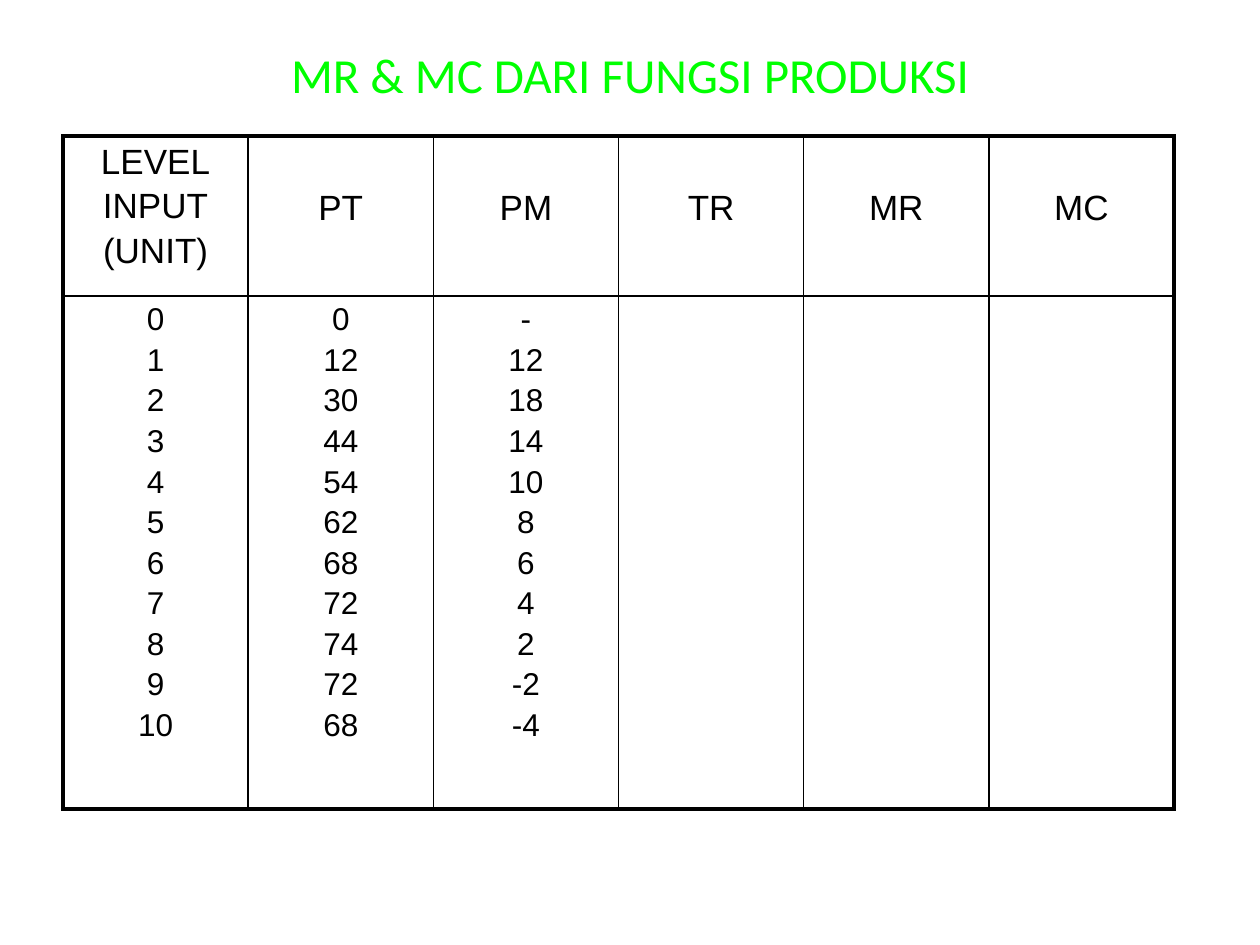
from dataclasses import dataclass

from lxml import etree
from pptx import Presentation
from pptx.dml.color import RGBColor
from pptx.enum.text import MSO_ANCHOR, PP_ALIGN
from pptx.oxml.ns import qn
from pptx.util import Inches, Pt

CENTER = PP_ALIGN.CENTER
MIDDLE = MSO_ANCHOR.MIDDLE
BLANK_LAYOUT = 6

COLUMNS = [
    (["LEVEL", "INPUT", "(UNIT)"], range(11)),
    (["PT"], [0, 12, 30, 44, 54, 62, 68, 72, 74, 72, 68]),
    (["PM"], ["-", 12, 18, 14, 10, 8, 6, 4, 2, -2, -4]),
    (["TR"], []),
    (["MR"], []),
    (["MC"], []),
]


@dataclass(frozen=True)
class Theme:
    title: dict
    header: dict
    body: dict
    border_color: str = "000000"
    outer_border: float = 2.25
    inner_border: float = 1
    header_gap: float = 3.3
    body_gap: float = 3


BLACK = RGBColor(0, 0, 0)
THEME = Theme(
    title={"name": "Calibri", "size": Pt(28), "color": RGBColor(0, 255, 0)},
    header={"name": "Arial", "size": Pt(20), "color": BLACK},
    body={"name": "Arial", "size": Pt(18), "color": BLACK},
)


class SlideBuilder:
    def __init__(self, slide, theme):
        self.slide = slide
        self.theme = theme

    def fill_text(self, frame, lines, style, gap=0):
        """Fill a text frame with one centred paragraph per line."""
        for index, line in enumerate(lines):
            para = frame.add_paragraph() if index else frame.paragraphs[0]
            para.alignment = CENTER
            para.space_before = Pt(gap)
            span = para.add_run()
            span.text = str(line)
            for key, value in style.items():
                if key == "color":
                    span.font.color.rgb = value
                else:
                    setattr(span.font, key, value)

    def title(self, text, left, top, width, height):
        box = self.slide.shapes.add_textbox(
            Inches(left), Inches(top), Inches(width), Inches(height))
        box.text_frame.word_wrap = True
        box.text_frame.vertical_anchor = MIDDLE
        self.fill_text(box.text_frame, [text], self.theme.title)

    def borders(self, cell, outer_sides):
        properties = cell._tc.get_or_add_tcPr()
        for side in "LRTB":
            width = (self.theme.outer_border if side in outer_sides
                     else self.theme.inner_border)
            line = etree.SubElement(properties, qn(f"a:ln{side}"), w=str(Pt(width)))
            fill = etree.SubElement(line, qn("a:solidFill"))
            etree.SubElement(fill, qn("a:srgbClr"), val=self.theme.border_color)

    def table(self, columns, left, top, column_width, row_heights):
        table = self.slide.shapes.add_table(
            len(row_heights), len(columns), Inches(left), Inches(top),
            Inches(column_width * len(columns)), Inches(sum(row_heights))).table
        table.first_row = table.horz_banding = False
        for row, height in zip(table.rows, row_heights):
            row.height = Inches(height)
        theme = self.theme
        for index, (heading, values) in enumerate(columns):
            table.columns[index].width = Inches(column_width)
            sides = {0: "L", len(columns) - 1: "R"}.get(index, "")
            header, body = table.cell(0, index), table.cell(1, index)
            for cell, edge in ((header, "T"), (body, "B")):
                self.borders(cell, sides + edge)
                cell.fill.background()
            if len(heading) == 1:
                # Level with the second line of the three-line heading
                header.margin_top = Inches(0.42)
            self.fill_text(header.text_frame, heading, theme.header, theme.header_gap)
            self.fill_text(body.text_frame, values, theme.body, theme.body_gap)


def main():
    deck = Presentation()
    deck.slide_width, deck.slide_height = Inches(10), Inches(7.5)
    page = deck.slides.add_slide(deck.slide_layouts[BLANK_LAYOUT])
    builder = SlideBuilder(page, THEME)
    builder.title("MR & MC DARI FUNGSI PRODUKSI", 0.5, 0.25, 9, 0.67)
    builder.table(COLUMNS, 0.5, 1.08, 1.47, [1.27, 4.07])
    deck.save("out.pptx")


if __name__ == "__main__":
    main()
